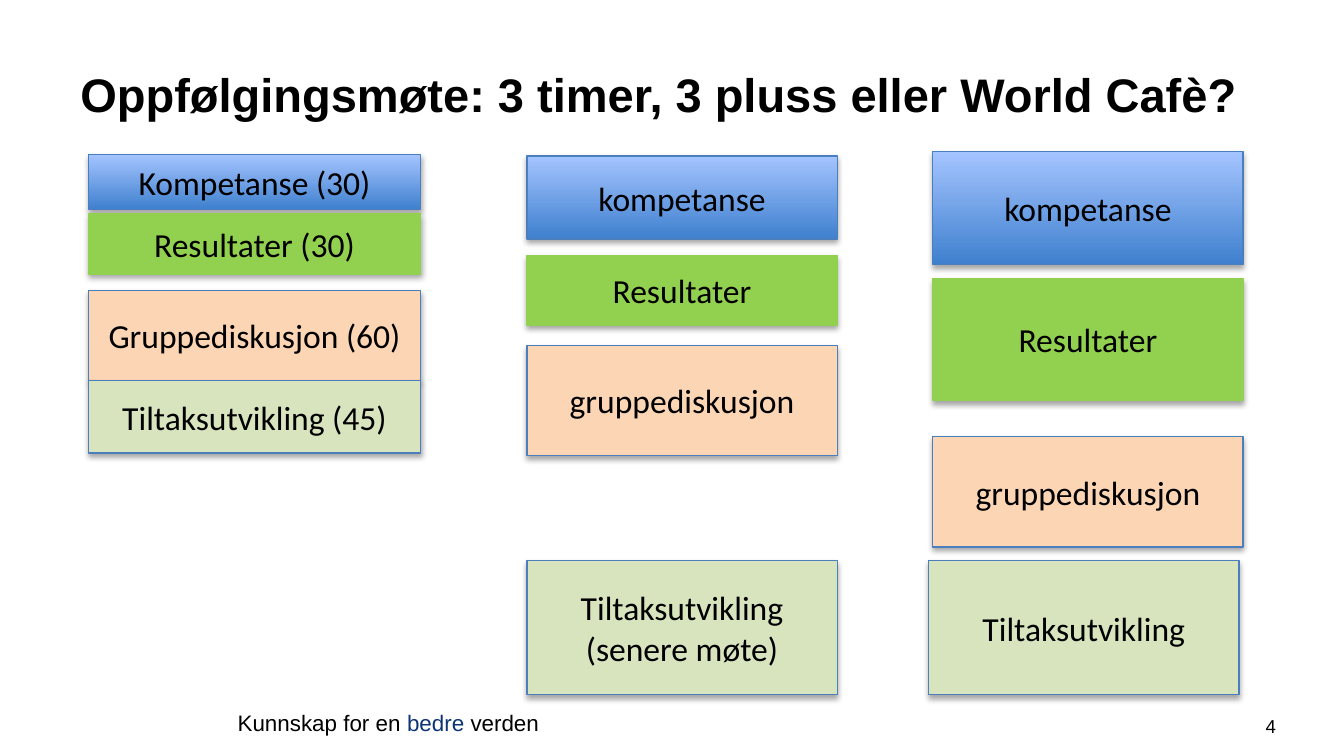
import pptx
import pptx.dml.color
import pptx.enum.shapes
import pptx.enum.text
import pptx.oxml
import pptx.oxml.ns
import pptx.util

Inches = pptx.util.Inches
Pt = pptx.util.Pt
RGBColor = pptx.dml.color.RGBColor
PP_ALIGN = pptx.enum.text.PP_ALIGN
MSO_ANCHOR = pptx.enum.text.MSO_ANCHOR

BLACK = RGBColor(0x00, 0x00, 0x00)
NAVY = RGBColor(0x0D, 0x34, 0x75)
BLUE_DARK = RGBColor(0x3F, 0x80, 0xCE)
BLUE_LIGHT = RGBColor(0xA4, 0xC4, 0xFF)
BLUE_EDGE = RGBColor(0x4B, 0x7E, 0xBC)
GREEN = RGBColor(0x92, 0xD0, 0x50)
PEACH = RGBColor(0xFC, 0xD5, 0xB5)
SAGE = RGBColor(0xD7, 0xE4, 0xBD)

STAGE_STYLES = [
    ((BLUE_DARK, BLUE_LIGHT), BLUE_EDGE),
    ((GREEN,), GREEN),
    ((PEACH,), BLUE_EDGE),
    ((SAGE,), BLUE_EDGE),
]

MEETINGS = [
    ((0.66, 1.15, 2.47), [
        ("Kompetanse (30)", 0, 0, 0.41),
        ("Resultater (30)", 0, 0.44, 0.45),
        ("Gruppediskusjon (60)", 0, 1.01, 0.67),
        ("Tiltaksutvikling (45)", 0, 1.68, 0.54),
    ]),
    ((3.92, 1.16, 2.31), [
        ("kompetanse", 0, 0, 0.62),
        ("Resultater", 0, 0.74, 0.52),
        ("gruppediskusjon", 0, 1.41, 0.82),
        ("Tiltaksutvikling (senere møte)", 0, 3.01, 1),
    ]),
    ((6.94, 1.13, 2.31), [
        ("kompetanse", 0, 0, 0.84),
        ("Resultater", 0, 0.94, 0.91),
        ("gruppediskusjon", 0, 2.12, 0.82),
        ("Tiltaksutvikling", -0.03, 3.04, 1),
    ]),
]


def set_font(paragraph, name, size, bold=False):
    """Set the shared font of a paragraph."""
    paragraph.font.name = name
    paragraph.font.size = Pt(size)
    paragraph.font.bold = bold


def add_text(slide, box, runs, size, bold=False, align=PP_ALIGN.LEFT, anchor=MSO_ANCHOR.TOP):
    """Add one Arial line made of (text, colour) runs."""
    frame = slide.shapes.add_textbox(*map(Inches, box)).text_frame
    frame.word_wrap = True
    frame.vertical_anchor = anchor
    line = frame.paragraphs[0]
    line.alignment = align
    set_font(line, "Arial", size, bold)
    for text, color in runs:
        run = line.add_run()
        run.text = text
        run.font.color.rgb = color


def add_shadow(shape):
    """Give a shape a soft shadow straight below it."""
    shape.shadow.inherit = False
    effects = shape._element.spPr.find(pptx.oxml.ns.qn("a:effectLst"))
    effects.append(pptx.oxml.parse_xml(
        f'<a:outerShdw {pptx.oxml.ns.nsdecls("a")} blurRad="{Pt(3.1)}" dist="{Pt(1.8)}" '
        'dir="5400000" rotWithShape="0"><a:srgbClr val="000000">'
        '<a:alpha val="35000"/></a:srgbClr></a:outerShdw>'))


def add_stage(slide, box, text, fills, edge):
    """Add one stage of a meeting as a labelled rectangle."""
    stage = slide.shapes.add_shape(
        pptx.enum.shapes.MSO_SHAPE.RECTANGLE, *map(Inches, box))
    if len(fills) > 1:
        stage.fill.gradient()
        stage.fill.gradient_angle = 90
        for stop, color in zip(stage.fill.gradient_stops, fills):
            stop.color.rgb = color
    else:
        stage.fill.solid()
        stage.fill.fore_color.rgb = fills[0]
    stage.line.color.rgb = edge
    stage.line.width = Pt(0.75)
    add_shadow(stage)
    stage.text_frame.word_wrap = True
    stage.text_frame.vertical_anchor = MSO_ANCHOR.MIDDLE
    label = stage.text_frame.paragraphs[0]
    label.text = text
    label.alignment = PP_ALIGN.CENTER
    set_font(label, "Calibri", 18)
    label.font.color.rgb = BLACK


def add_meeting(slide, box, stages):
    """Add a column of stages placed from the column's top left corner."""
    left, top, width = box
    for (text, dx, dy, height), (fills, edge) in zip(stages, STAGE_STYLES):
        add_stage(slide, (left + dx, top + dy, width, height), text, fills, edge)


def add_footer(slide, box):
    """Add the slogan and the slide number along the bottom."""
    left, top, width, height = box
    slogan = [("Kunnskap for en ", BLACK), ("bedre ", NAVY), ("verden", BLACK)]
    add_text(slide, (left, top, 2.46, height), slogan, 12)
    add_text(slide, (left + width - 0.37, top + 0.04, 0.37, height), [("4", BLACK)], 10,
             align=PP_ALIGN.CENTER)


def main():
    """Build and save the slide."""
    deck = pptx.Presentation()
    deck.slide_width = Inches(10)
    deck.slide_height = Inches(10 * 9 / 16)
    slide = deck.slides.add_slide(deck.slide_layouts[6])
    add_footer(slide, (1.67, 5.23, 7.97, 0.3))
    title = "Oppfølgingsmøte: 3 timer, 3 pluss eller World Cafè?"
    add_text(slide, (0.5, 0.23, 9, 0.94), [(title, BLACK)], 25.2, bold=True,
             anchor=MSO_ANCHOR.MIDDLE)
    for box, stages in MEETINGS:
        add_meeting(slide, box, stages)
    deck.save("out.pptx")


if __name__ == "__main__":
    main()
